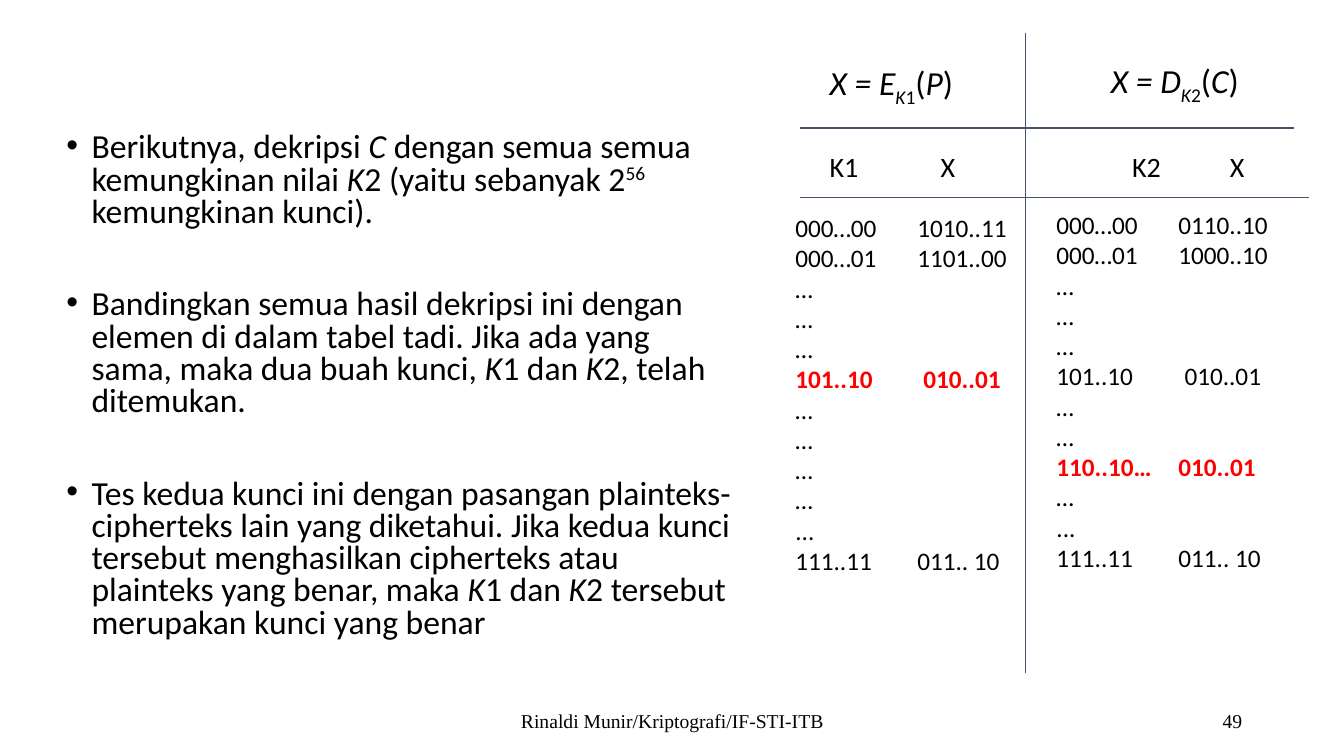
"""Build the slide on matching keys found from both ends of a double cipher."""
from collections import namedtuple
from pptx import Presentation
from pptx.dml.color import RGBColor
from pptx.enum.shapes import MSO_CONNECTOR
from pptx.enum.text import MSO_ANCHOR, PP_ALIGN
from pptx.oxml.ns import qn
from pptx.util import Pt
from lxml.etree import SubElement

Theme = namedtuple("Theme", "ink red rule sans serif body head cell foot")
THEME = Theme(ink=RGBColor(0, 0, 0), red=RGBColor(255, 0, 0),
              rule=RGBColor(0x44, 0x54, 0x6A), sans="Calibri",
              serif="Times New Roman", body=24, head=20, cell=18, foot=14)
PX = 9144
SIZE = (1333, 750)

BULLETS = [
    [("Berikutnya, dekripsi ", ""), ("C", "i"),
     (" dengan semua semua kemungkinan nilai ", ""), ("K", "i"),
     ("2 (yaitu sebanyak 2", ""), ("56", "u"), (" kemungkinan kunci).", "")],
    [("Bandingkan semua hasil dekripsi ini dengan elemen di dalam tabel tadi. "
      "Jika ada yang sama, maka dua buah kunci, ", ""),
     ("K", "i"), ("1 dan ", ""), ("K", "i"), ("2, telah ditemukan.", "")],
    [("Tes kedua kunci ini dengan pasangan plainteks-cipherteks lain yang "
      "diketahui. Jika kedua kunci tersebut menghasilkan cipherteks atau "
      "plainteks yang benar, maka ", ""),
     ("K", "i"), ("1 dan ", ""), ("K", "i"),
     ("2 tersebut merupakan kunci yang benar", "")],
]
BODY = (56, 127, 680, 552)
GAP = 43
HANG = 25

TITLES = [("E", "1", "P", (813, 57, 155, 50)),
          ("D", "2", "C", (1092, 55, 160, 50))]
HEADS = "K1\tX\tK2\tX"
HEAD_BOX = (813, 143, 448, 44)
HEAD_TABS = (110, 300, 397)

NEAR, FAR = 121, 127
LISTS = [
    ((779, 206, 240, 374),
     [("000…00\t1010..11", NEAR, ""), ("000…01\t1101..00", NEAR, "")]
     + [("…", NEAR, "")] * 3 + [("101..10\t010..01", FAR, "br")]
     + [("…", NEAR, "")] * 4
     + [("...", NEAR, ""), ("111..11\t011.. 10", NEAR, "")]),
    ((1038, 203, 240, 374),
     [("000…00\t0110..10", NEAR, ""), ("000…01\t1000..10", NEAR, "")]
     + [("…", NEAR, "")] * 3 + [("101..10\t010..01", FAR, "")]
     + [("…", NEAR, "")] * 2 + [("110..10…\t010..01", NEAR, "br")]
     + [("…", NEAR, ""), ("...", NEAR, ""), ("111..11\t011.. 10", NEAR, "")]),
]
RULES = [(793, 127, 1283, 127), (793, 196, 1298, 196), (1017, 33, 1017, 668)]
FOOTS = [("Rinaldi Munir/Kriptografi/IF-STI-ITB", PP_ALIGN.CENTER,
          (442, 695, 450, 40)),
         ("49", PP_ALIGN.RIGHT, (942, 695, 300, 40))]


def emu(box):
    return [n * PX for n in box]


def add_box(slide, box):
    frame = slide.shapes.add_textbox(*emu(box)).text_frame
    frame.word_wrap = True
    return frame


def next_para(frame, index):
    return frame.add_paragraph() if index else frame.paragraphs[0]


def add_runs(para, runs, size, face=THEME.sans):
    """Add runs marked i italic, b bold, r red, u raised or d lowered."""
    for text, marks in runs:
        run = para.add_run()
        run.text = text
        font = run.font
        font.name, font.size = face, Pt(size)
        font.italic, font.bold = "i" in marks, "b" in marks
        font.color.rgb = THEME.red if "r" in marks else THEME.ink
        for mark, shift in (("u", "30000"), ("d", "-25000")):
            if mark in marks:
                font._element.set("baseline", shift)


def add_tabs(para, stops):
    tabs = SubElement(para._p.get_or_add_pPr(), qn("a:tabLst"))
    for stop in stops:
        SubElement(tabs, qn("a:tab"), pos=str(stop * PX), algn="l")


def add_body(slide):
    frame = add_box(slide, BODY)
    for index, runs in enumerate(BULLETS):
        para = next_para(frame, index)
        para.line_spacing = 0.8
        if index:
            para.space_before = Pt(GAP)
        props = para._p.get_or_add_pPr()
        props.set("marL", str(HANG * PX))
        props.set("indent", str(-HANG * PX))
        SubElement(props, qn("a:buFont"), typeface="Arial")
        SubElement(props, qn("a:buChar"), char="•")
        add_runs(para, runs, THEME.body)


def add_lists(slide):
    for func, num, arg, box in TITLES:
        runs = [("X = " + func, "i"), ("K", "id"), (num, "d"),
                ("(", ""), (arg, "i"), (")", "")]
        add_runs(add_box(slide, box).paragraphs[0], runs, THEME.body)
    head = add_box(slide, HEAD_BOX).paragraphs[0]
    add_tabs(head, HEAD_TABS)
    add_runs(head, [(HEADS, "")], THEME.head)
    for box, rows in LISTS:
        frame = add_box(slide, box)
        for index, (text, stop, marks) in enumerate(rows):
            para = next_para(frame, index)
            add_tabs(para, [stop])
            add_runs(para, [(text, marks)], THEME.cell)


def add_rules(slide):
    for ends in RULES:
        line = slide.shapes.add_connector(MSO_CONNECTOR.STRAIGHT, *emu(ends))
        line.line.color.rgb = THEME.rule
        line.line.width = Pt(1)
        SubElement(line._element.spPr, qn("a:effectLst"))


def add_foots(slide):
    for text, align, box in FOOTS:
        frame = add_box(slide, box)
        frame.vertical_anchor = MSO_ANCHOR.MIDDLE
        para = frame.paragraphs[0]
        para.alignment = align
        add_runs(para, [(text, "")], THEME.foot, THEME.serif)


def main():
    deck = Presentation()
    deck.slide_width, deck.slide_height = emu(SIZE)
    slide = deck.slides.add_slide(deck.slide_layouts[6])
    add_body(slide)
    add_rules(slide)
    add_lists(slide)
    add_foots(slide)
    deck.save("out.pptx")


if __name__ == "__main__":
    main()
